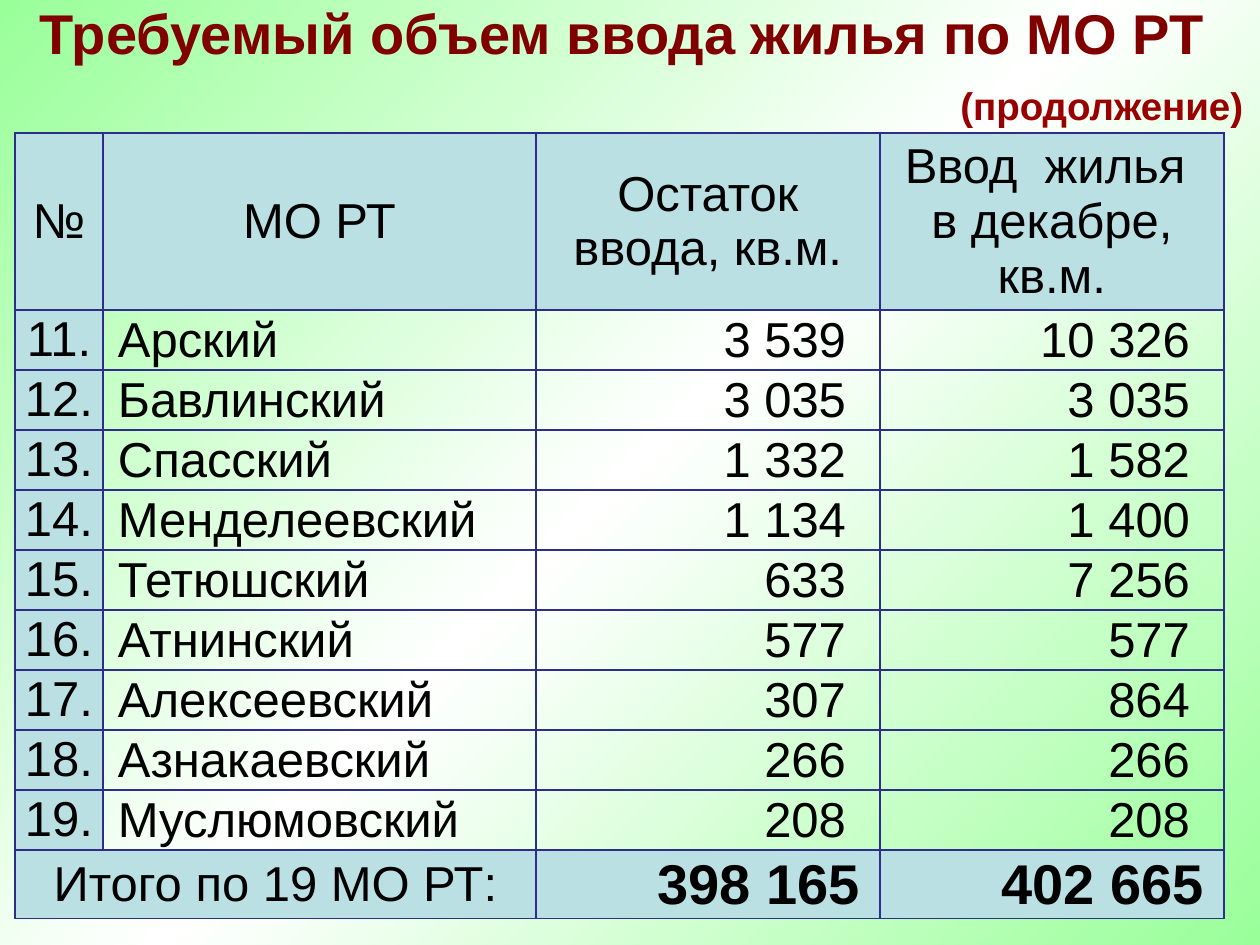
from copy import deepcopy

from lxml.etree import SubElement
from pptx import Presentation
from pptx.dml.color import RGBColor
from pptx.enum.text import MSO_ANCHOR as Anchor, PP_ALIGN as Align
from pptx.oxml.ns import qn
from pptx.util import Pt

PX = 914400 / 126
FONT = "Arial"
GREEN = RGBColor(0x99, 0xFF, 0x99)
WHITE = RGBColor(0xFF, 0xFF, 0xFF)
BLACK = RGBColor(0, 0, 0)
MAROON = RGBColor(0x80, 0, 0)
RED = RGBColor(0x99, 0, 0)
PALE_BLUE = RGBColor(0xBB, 0xE0, 0xE3)
NAVY = RGBColor(0x2D, 0x2D, 0x8A)

TITLE = "Требуемый объем ввода жилья по МО РТ "
CONTINUED = "(продолжение)"
HEADER = [["№"], ["МО РТ"], ["Остаток ввода, кв.м."],
          ["Ввод  жилья ", "в декабре, кв.м."]]
FIRST_NUMBER = 11
DISTRICTS = [
    ("Арский", "3 539", "10 326"),
    ("Бавлинский", "3 035", "3 035"),
    ("Спасский", "1 332", "1 582"),
    ("Менделеевский", "1 134", "1 400"),
    ("Тетюшский", "633", "7 256"),
    ("Атнинский", "577", "577"),
    ("Алексеевский", "307", "864"),
    ("Азнакаевский", "266", "266"),
    ("Муслюмовский", "208", "208"),
]
TOTAL_LABEL = "Итого по 19 МО РТ:"
TOTALS = ["398 165", "402 665"]

COLUMN_WIDTHS = [88, 433, 344, 344]
ROW_HEIGHTS = [177] + [60] * len(DISTRICTS) + [69]

# Cell insets in px: left, top, right, bottom
HEADER_INSETS = (5, 0, 5, 0)
NUMBER_INSETS = (0, 0, 0, 0)
NAME_INSETS = (15, 1, 20, 0)
VALUE_INSETS = (15, 1, 34, 0)
TOTAL_INSETS = (1, 1, 20, 0)


def px(length):
    return round(length * PX)


def set_insets(target, insets):
    (target.margin_left, target.margin_top,
     target.margin_right, target.margin_bottom) = map(px, insets)


def write(frame, lines, size, color, align, bold=False):
    for index, line in enumerate(lines):
        para = frame.add_paragraph() if index else frame.paragraphs[0]
        para.alignment = align
        span = para.add_run()
        span.text = line
        span.font.name = FONT
        span.font.size = Pt(size)
        span.font.bold = bold
        span.font.color.rgb = color


def add_label(slide, area, text, size, color, align):
    box = slide.shapes.add_textbox(*map(px, area))
    box.text_frame.word_wrap = True
    write(box.text_frame, [text], size, color, align, bold=True)
    return box.text_frame


def add_borders(cell):
    """Draw all four sides; the lines must precede the fill in tcPr."""
    properties = cell._tc.get_or_add_tcPr()
    for index, side in enumerate(("lnL", "lnR", "lnT", "lnB")):
        line = SubElement(properties, qn(f"a:{side}"), w=str(Pt(1)))
        solid = SubElement(line, qn("a:solidFill"))
        SubElement(solid, qn("a:srgbClr"), val=str(NAVY))
        properties.insert(index, line)


def fill_cell(cell, lines, insets, align, fill=None, size=28, bold=False):
    set_insets(cell, insets)
    cell.vertical_anchor = Anchor.MIDDLE
    write(cell.text_frame, lines, size, BLACK, align, bold)
    if fill is None:
        cell.fill.background()
    else:
        cell.fill.solid()
        cell.fill.fore_color.rgb = fill


def paint_background(slide):
    fill = slide.background.fill
    fill.gradient()
    fill.gradient_angle = 315
    first = slide.element.xpath(".//p:bg//a:gs")[0]
    first.addnext(deepcopy(first))
    colors = [(0, GREEN), (0.5, WHITE), (1, GREEN)]
    for stop, (position, color) in zip(fill.gradient_stops, colors):
        stop.position = position
        stop.color.rgb = color


def add_housing_table(slide):
    table = slide.shapes.add_table(
        len(ROW_HEIGHTS), len(COLUMN_WIDTHS), px(15), px(133),
        px(sum(COLUMN_WIDTHS)), px(sum(ROW_HEIGHTS))).table
    table.first_row = table.horz_banding = False
    for column, width in zip(table.columns, COLUMN_WIDTHS):
        column.width = px(width)
    for row, height in zip(table.rows, ROW_HEIGHTS):
        row.height = px(height)

    for column, lines in enumerate(HEADER):
        fill_cell(table.cell(0, column), lines, HEADER_INSETS,
                  Align.CENTER, PALE_BLUE)
    for row, (name, *values) in enumerate(DISTRICTS, start=1):
        fill_cell(table.cell(row, 0), [f"{FIRST_NUMBER + row - 1}."],
                  NUMBER_INSETS, Align.CENTER, PALE_BLUE)
        fill_cell(table.cell(row, 1), [name], NAME_INSETS, Align.LEFT)
        for column, value in enumerate(values, start=2):
            fill_cell(table.cell(row, column), [value], VALUE_INSETS,
                      Align.RIGHT)

    last = len(ROW_HEIGHTS) - 1
    table.cell(last, 0).merge(table.cell(last, 1))
    fill_cell(table.cell(last, 0), [TOTAL_LABEL], NUMBER_INSETS,
              Align.CENTER, PALE_BLUE)
    for column, value in enumerate(TOTALS, start=2):
        fill_cell(table.cell(last, column), [value], TOTAL_INSETS,
                  Align.RIGHT, PALE_BLUE, size=32, bold=True)
    for cell in table.iter_cells():
        add_borders(cell)


def main():
    deck = Presentation()
    deck.slide_width, deck.slide_height = px(1260), px(945)
    slide = deck.slides.add_slide(deck.slide_layouts[6])
    paint_background(slide)
    title = add_label(slide, (0, 19, 1260, 43), TITLE, 32, MAROON,
                      Align.CENTER)
    set_insets(title, (13, 0, 13, 0))
    title.vertical_anchor = Anchor.MIDDLE
    title.paragraphs[0].line_spacing = 0.7
    add_housing_table(slide)
    add_label(slide, (948, 76, 317, 59), CONTINUED, 22, RED, Align.LEFT)
    deck.save("out.pptx")


if __name__ == "__main__":
    main()
